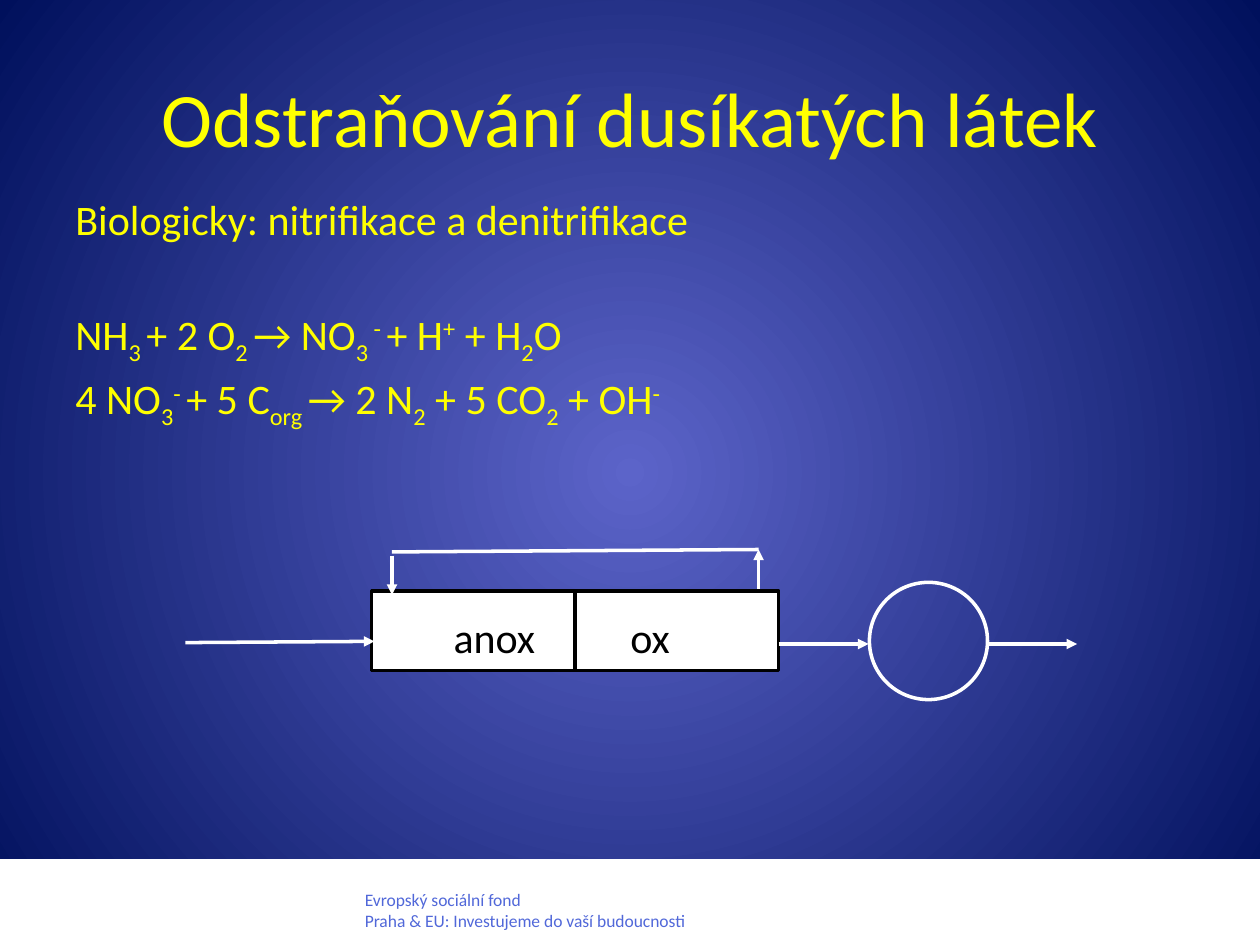
from lxml.etree import SubElement
from pptx import Presentation
from pptx.dml.color import RGBColor
from pptx.enum.shapes import MSO_CONNECTOR, MSO_SHAPE
from pptx.enum.text import MSO_ANCHOR, PP_ALIGN
from pptx.oxml.ns import qn
from pptx.util import Pt

WHITE = RGBColor(0xFF, 0xFF, 0xFF)
BLACK = RGBColor(0x00, 0x00, 0x00)
YELLOW = RGBColor(0xFF, 0xFF, 0x00)
FOOTER_BLUE = RGBColor(0x51, 0x68, 0xD9)
GLOW = RGBColor(0x5C, 0x64, 0xC9)
NAVY = RGBColor(0x00, 0x10, 0x5C)

SUB, SUP = -25, 30

NITRIFICATION = [
    ("NH", 0), ("3 ", SUB), ("+ 2 O", 0), ("2 ", SUB), ("→ NO", 0), ("3 ", SUB),
    ("- ", SUP), ("+ H", 0), ("+", SUP), (" + H", 0), ("2", SUB), ("O", 0),
]
DENITRIFICATION = [
    ("4 NO", 0), ("3", SUB), ("- ", SUP), ("+ 5 C", 0), ("org ", SUB), ("→ 2 N", 0),
    ("2", SUB), (" + 5 CO", 0), ("2", SUB), (" + OH", 0), ("-", SUP),
]


class SlideBuilder:
    font = "Calibri"
    line_width = Pt(2)

    def __init__(self, slide):
        self.slide = slide

    def radial_background(self, center, edge):
        fill = self.slide.background.fill
        fill.gradient()
        for stop, color, position in zip(fill.gradient_stops, (center, edge), (0, 1)):
            stop.color.rgb = color
            stop.position = position
        gradient = self.slide.background._cSld.find(".//" + qn("a:gradFill"))
        gradient.remove(gradient.find(qn("a:lin")))
        path = SubElement(gradient, qn("a:path"), path="circle")
        SubElement(path, qn("a:fillToRect"), l="50000", t="50000", r="50000", b="50000")

    def shape(self, kind, left, top, width, height, fill=None, line=None):
        shape = self.slide.shapes.add_shape(kind, Pt(left), Pt(top), Pt(width), Pt(height))
        shape.shadow.inherit = False
        if fill is None:
            shape.fill.background()
        else:
            shape.fill.solid()
            shape.fill.fore_color.rgb = fill
        if line is None:
            shape.line.fill.background()
        else:
            shape.line.color.rgb = line
            shape.line.width = self.line_width

    def text(self, left, top, width, height, paragraphs, size, color,
             align=PP_ALIGN.LEFT, anchor=MSO_ANCHOR.TOP):
        """Each paragraph is (space before, [(text, baseline percent), ...])."""
        box = self.slide.shapes.add_textbox(Pt(left), Pt(top), Pt(width), Pt(height))
        frame = box.text_frame
        frame.word_wrap = True
        frame.vertical_anchor = anchor
        for index, (space_before, runs) in enumerate(paragraphs):
            paragraph = frame.add_paragraph() if index else frame.paragraphs[0]
            paragraph.alignment = align
            paragraph.space_before = Pt(space_before)
            for wording, baseline in runs:
                run = paragraph.add_run()
                run.text = wording
                run.font.name = self.font
                run.font.size = Pt(size)
                run.font.color.rgb = color
                if baseline:
                    run.font._element.set("baseline", str(baseline * 1000))

    def label(self, left, top, width, height, wording, size, color):
        self.text(left, top, width, height, [(0, [(wording, 0)])], size, color,
                  PP_ALIGN.CENTER, MSO_ANCHOR.MIDDLE)

    def line(self, start, end, arrow=True):
        connector = self.slide.shapes.add_connector(
            MSO_CONNECTOR.STRAIGHT, *map(Pt, start + end))
        connector.line.color.rgb = WHITE
        connector.line.width = self.line_width
        if arrow:
            SubElement(connector.line._get_or_add_ln(), qn("a:tailEnd"), type="triangle")
        SubElement(connector._element.spPr, qn("a:effectLst"))


def main():
    presentation = Presentation()
    presentation.slide_width, presentation.slide_height = Pt(720), Pt(540)
    builder = SlideBuilder(presentation.slides.add_slide(presentation.slide_layouts[6]))
    builder.radial_background(GLOW, NAVY)

    builder.shape(MSO_SHAPE.RECTANGLE, 0, 491, 720, 49, fill=WHITE)
    builder.text(201.4, 504.7, 272, 32, [
        (0, [("Evropský sociální fond", 0)]),
        (0, [("Praha & EU: Investujeme do vaší budoucnosti", 0)]),
    ], 10, FOOTER_BLUE)

    builder.label(36, 21.6, 648, 90, "Odstraňování dusíkatých látek", 44, YELLOW)
    builder.text(36, 107, 648, 150, [
        (0, [("Biologicky: nitrifikace a denitrifikace", 0)]),
        (37, NITRIFICATION),
        (4, DENITRIFICATION),
    ], 24, YELLOW)

    # Tank with an anoxic and an oxic half
    tank_left, tank_top, tank_width, tank_height = 212.4, 337.7, 232.6, 45.4
    builder.shape(MSO_SHAPE.RECTANGLE, tank_left, tank_top, tank_width, tank_height,
                  WHITE, BLACK)
    builder.shape(MSO_SHAPE.RECTANGLE, tank_left, tank_top, tank_width / 2, tank_height,
                  line=BLACK)
    for zone, center in (("anox", 282.5), ("ox", 371.5)):
        builder.label(center - 40, 346, 80, 36, zone, 24, BLACK)

    # Internal recirculation from the oxic half back to the anoxic half
    recycle_left, recycle_right = 224, 433.5
    builder.line((recycle_left, 315.4), (recycle_right, 314), arrow=False)
    builder.line((recycle_right, 336.5), (recycle_right, 314))
    builder.line((recycle_left, 317.5), (recycle_left, 340))

    # Inflow, settling tank and outflow
    flow = 368
    builder.line((106, 367.2), (214, 366.5))
    builder.line((tank_left + tank_width, flow), (496.3, flow))
    builder.line((564, flow), (615.5, flow))
    builder.shape(MSO_SHAPE.OVAL, 496.8, 332.8, 67.5, 67, line=WHITE)

    presentation.save("out.pptx")


if __name__ == "__main__":
    main()
